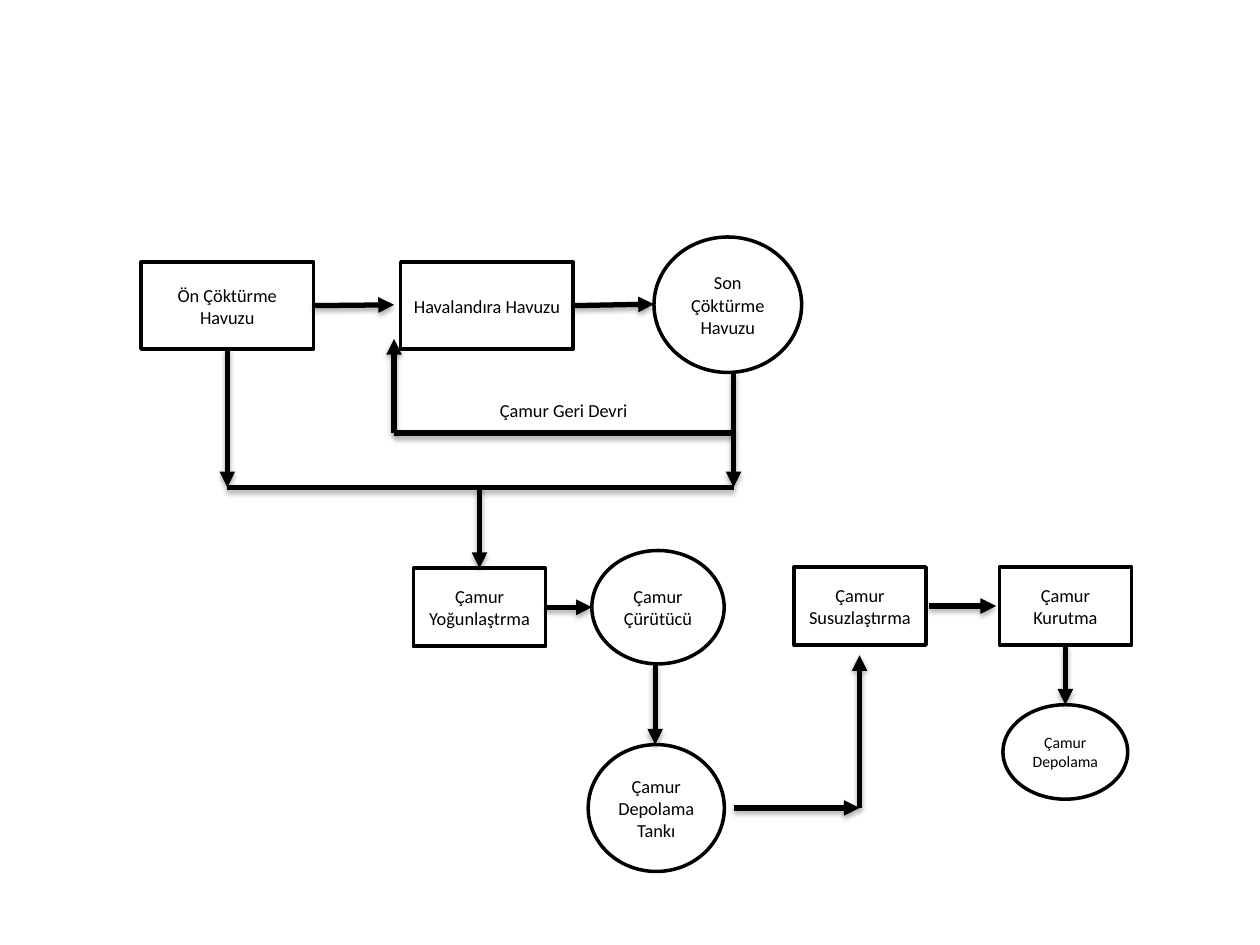
"""Build a flow diagram of sludge treatment in a wastewater plant."""
from lxml import etree
from pptx import Presentation
from pptx.dml.color import RGBColor
from pptx.enum.shapes import MSO_CONNECTOR, MSO_SHAPE
from pptx.enum.text import MSO_ANCHOR, MSO_AUTO_SIZE, PP_ALIGN
from pptx.oxml.ns import qn
from pptx.util import Pt

BLACK = RGBColor(0, 0, 0)
WHITE = RGBColor(255, 255, 255)
RECT, OVAL = MSO_SHAPE.RECTANGLE, MSO_SHAPE.OVAL
STRAIGHT = MSO_CONNECTOR.STRAIGHT
MIDDLE, CENTER = MSO_ANCHOR.MIDDLE, PP_ALIGN.CENTER
GROW = MSO_AUTO_SIZE.SHAPE_TO_FIT_TEXT
TOP, LEFT, BOTTOM, RIGHT = range(4)

BOX_FRAME = {
    "word_wrap": True,
    "vertical_anchor": MIDDLE,
    "margin_left": Pt(5.4),
    "margin_right": Pt(5.4),
    "margin_top": Pt(2.7),
    "margin_bottom": Pt(2.7),
}
LABEL_FRAME = {"word_wrap": True, "auto_size": GROW}

POOL = (98.6, 49.7)
UNIT = (75.6, 44.6)
STAGES = {
    "primary": (RECT, 80.6, 149.8, *POOL, "Ön Çöktürme Havuzu", 10.5),
    "aeration": (RECT, 229, 149.8, *POOL, "Havalandıra Havuzu", 10.5),
    "final": (OVAL, 373.7, 135.4, 84.4, 77.4, "Son Çöktürme Havuzu", 10.5),
    "thickener": (RECT, 236.2, 324.7, *UNIT, "Çamur Yoğunlaştrma", 10.5),
    "digester": (OVAL, 338.2, 314.6, 75.6, 64.8, "Çamur Çürütücü", 10.5),
    "tank": (OVAL, 336.1, 425.5, 77.8, 72.5, "Çamur Depolama Tankı", 10.5),
    "dewatering": (RECT, 453.6, 324, *UNIT, "Çamur Susuzlaştırma", 10.5),
    "drying": (RECT, 571, 324, *UNIT, "Çamur Kurutma", 10.5),
    "storage": (OVAL, 573.1, 402.7, 71.3, 54, "Çamur Depolama", 9),
}

RETURN_X, RETURN_Y = 225.2, 247.4
FINAL_X, COLLECT_Y = 419.2, 278.5
PRIMARY_X = 129.9
RISER_X, TANK_Y = 491.2, 461.7

# Each end is a point or a stage with one of its sides.
ARROWS = [
    (("primary", RIGHT), (RETURN_X, 174.2)),
    (("aeration", RIGHT), (373.7, 173.8)),
    ((FINAL_X, 212.8), (FINAL_X, COLLECT_Y)),
    ((RETURN_X, RETURN_Y), (RETURN_X, 193.7)),
    (("primary", BOTTOM), (PRIMARY_X, COLLECT_Y)),
    ((274, COLLECT_Y), ("thickener", TOP)),
    (("thickener", RIGHT), (338.2, 347)),
    ((374.4, 379.4), (374.4, 425.5)),
    ((FINAL_X, TANK_Y), (RISER_X, TANK_Y)),
    ((RISER_X, TANK_Y), (RISER_X, 374.4)),
    ((530.9, 346.3), (569.2, 346.3)),
    (("drying", BOTTOM), (608.8, 402.7)),
]
PLAIN_LINES = [
    ((RETURN_X, RETURN_Y), (FINAL_X, RETURN_Y)),
    ((PRIMARY_X, COLLECT_Y), (FINAL_X, COLLECT_Y)),
]


def apply_format(target, values):
    """Set every attribute named in values on target."""
    for name, value in values.items():
        setattr(target, name, value)


def write_text(frame, text, size, frame_format, alignment=None):
    """Write one formatted paragraph into a text frame."""
    apply_format(frame, frame_format)
    para = frame.paragraphs[0]
    para.alignment = alignment
    span = para.add_run()
    span.text = text
    apply_format(span.font, {"name": "Calibri", "size": Pt(size)})
    span.font.color.rgb = BLACK


def add_stage(page, kind, left, top, width, height, text, size):
    """Add an outlined treatment stage with centred text."""
    box = page.shapes.add_shape(kind, Pt(left), Pt(top), Pt(width), Pt(height))
    box.shadow.inherit = False
    box.fill.solid()
    box.fill.fore_color.rgb = WHITE
    box.line.color.rgb = BLACK
    box.line.width = Pt(2)
    write_text(box.text_frame, text, size, BOX_FRAME, CENTER)
    return box


def add_label(page, left, top, width, height, text):
    """Add a free label."""
    box = page.shapes.add_textbox(Pt(left), Pt(top), Pt(width), Pt(height))
    write_text(box.text_frame, text, 10.5, LABEL_FRAME)


def add_shadow(properties):
    """Give a connector a soft shadow straight below it."""
    effects = etree.SubElement(properties, qn("a:effectLst"))
    shadow = etree.SubElement(
        effects, qn("a:outerShdw"), blurRad=str(Pt(3.1)), dist=str(Pt(1.8)),
        dir="5400000", rotWithShape="0")
    color = etree.SubElement(shadow, qn("a:srgbClr"), val=str(BLACK))
    etree.SubElement(color, qn("a:alpha"), val="35000")


def add_flow(page, boxes, start, end, arrow):
    """Draw a flow line, joined to the stages that its ends name."""
    points = [(0, 0) if end_point[0] in boxes else end_point
              for end_point in (start, end)]
    lengths = [Pt(value) for point in points for value in point]
    flow = page.shapes.add_connector(STRAIGHT, *lengths)
    for place, join in ((start, flow.begin_connect), (end, flow.end_connect)):
        if place[0] in boxes:
            join(boxes[place[0]], place[1])
    flow.line.color.rgb = BLACK
    flow.line.width = Pt(3)
    properties = flow.element.spPr
    if arrow:
        etree.SubElement(properties.find(qn("a:ln")), qn("a:tailEnd"),
                         type="triangle")
    add_shadow(properties)


def main():
    """Build and save the deck."""
    deck = Presentation()
    deck.slide_width, deck.slide_height = Pt(720), Pt(540)
    page = deck.slides.add_slide(deck.slide_layouts[6])
    boxes = {name: add_stage(page, *stage) for name, stage in STAGES.items()}
    for flows, arrow in ((PLAIN_LINES, False), (ARROWS, True)):
        for start, end in flows:
            add_flow(page, boxes, start, end, arrow)
    add_label(page, 278.6, 224.6, 130.3, 20.2, "Çamur Geri Devri")
    deck.save("out.pptx")


if __name__ == "__main__":
    main()
